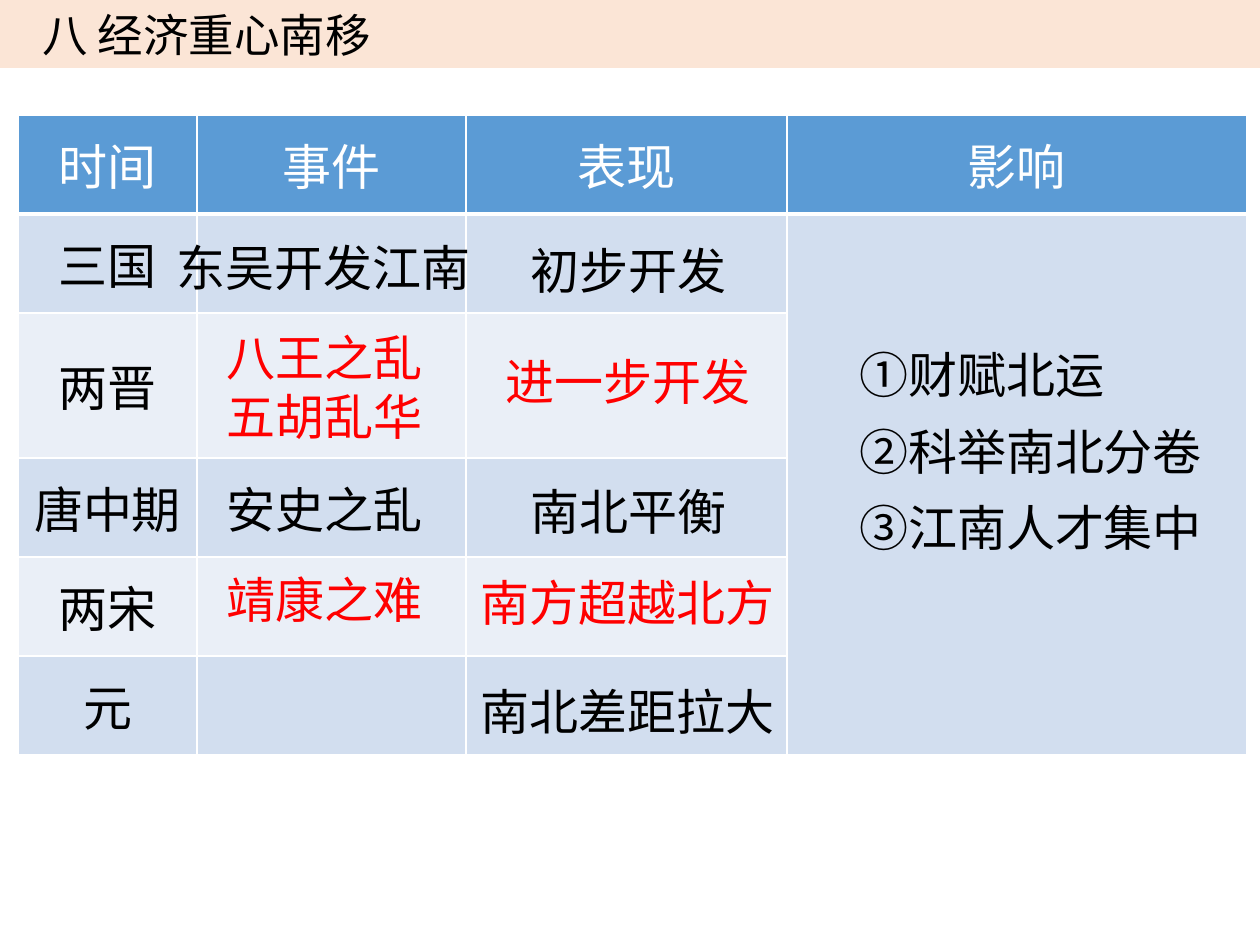
from lxml.etree import SubElement
from pptx import Presentation
from pptx.dml.color import RGBColor
from pptx.enum.text import MSO_ANCHOR as Anchor, MSO_AUTO_SIZE as AutoSize, PP_ALIGN as Align
from pptx.oxml.ns import qn
from pptx.util import Emu, Pt

FONT = "Noto Sans CJK SC"
BLACK, WHITE, RED = "000000", "FFFFFF", "FF0000"
HEADER_FILL, BAND_FILLS = "5B9BD5", ("D2DEEF", "EAEFF7")
COLUMN_WIDTHS = (179, 269, 321, 460)
ROW_HEIGHTS = (99, 99, 145, 99, 99, 99)
HEADINGS = ("时间", "事件", "表现", "影响")
PERIODS = ("三国", "两晋", "唐中期", "两宋", "元")
EVENT_CENTER, RESULT_CENTER = 308, 612
ENTRIES = (
    (EVENT_CENTER, 116, "东吴开发江南", BLACK),
    (EVENT_CENTER, 206, "八王之乱\n五胡乱华", RED),
    (EVENT_CENTER, 358, "安史之乱", BLACK),
    (EVENT_CENTER, 448, "靖康之难", RED),
    (RESULT_CENTER, 119, "初步开发", BLACK),
    (RESULT_CENTER, 230, "进一步开发", RED),
    (RESULT_CENTER, 360, "南北平衡", BLACK),
    (RESULT_CENTER, 451, "南方超越北方", RED),
    (RESULT_CENTER, 560, "南北差距拉大", BLACK),
)
EFFECTS = "①财赋北运\n②科举南北分卷\n③江南人才集中"


def px(length):
    return Emu(round(length * 914400 / 126))


def color(value):
    return RGBColor.from_string(value)


def format_text(text_frame, size, text_color, align=Align.LEFT, spacing=None):
    for paragraph in text_frame.paragraphs:
        paragraph.alignment = align
        if spacing:
            paragraph.line_spacing = spacing
        for run in paragraph.runs:
            run.font.size = Pt(size)
            run.font.bold = False
            run.font.color.rgb = color(text_color)
            run.font.name = FONT
            SubElement(run._r.get_or_add_rPr(), qn("a:ea"), typeface=FONT)


def add_title(slide, left, top, width, height):
    title = slide.shapes.title
    title.left, title.top, title.width, title.height = map(px, (left, top, width, height))
    title.fill.solid()
    title.fill.fore_color.rgb = color("FBE5D6")
    text_frame = title.text_frame
    text_frame.text = "八 经济重心南移"
    text_frame.auto_size = AutoSize.NONE
    text_frame.vertical_anchor = Anchor.MIDDLE
    text_frame.margin_left = px(42)
    text_frame.margin_top = text_frame.margin_bottom = 0
    format_text(text_frame, 26, BLACK)


def format_cell(cell, fill, bottom_width):
    properties = cell._tc.get_or_add_tcPr()
    for side, width in (("L", 1), ("R", 1), ("T", 1), ("B", bottom_width)):
        line = SubElement(properties, qn(f"a:ln{side}"), w=str(Pt(width)))
        SubElement(SubElement(line, qn("a:solidFill")), qn("a:srgbClr"), val=WHITE)
    cell.fill.solid()
    cell.fill.fore_color.rgb = color(fill)
    cell.vertical_anchor = Anchor.MIDDLE


def add_period_table(slide, left, top):
    size = len(ROW_HEIGHTS), len(COLUMN_WIDTHS)
    frame = slide.shapes.add_table(
        *size, px(left), px(top), px(sum(COLUMN_WIDTHS)), px(sum(ROW_HEIGHTS)))
    table = frame.table
    for column, width in zip(table.columns, COLUMN_WIDTHS):
        column.width = px(width)
    for index, (row, height) in enumerate(zip(table.rows, ROW_HEIGHTS)):
        row.height = px(height)
        header = index == 0
        fill = HEADER_FILL if header else BAND_FILLS[(index - 1) % 2]
        texts = HEADINGS if header else (PERIODS[index - 1],)
        for cell in row.cells:
            format_cell(cell, fill, 3 if header else 1)
        for cell, text in zip(row.cells, texts):
            cell.text_frame.text = text
            format_text(cell.text_frame, 28, WHITE if header else BLACK, Align.CENTER)
    table.cell(1, 3).merge(table.cell(5, 3))


def add_label(slide, left, top, width, height, text, text_color, spacing=None):
    label = slide.shapes.add_textbox(px(left), px(top), px(width), px(height))
    text_frame = label.text_frame
    text_frame.text = text
    text_frame.word_wrap = False
    text_frame.auto_size = AutoSize.SHAPE_TO_FIT_TEXT
    format_text(text_frame, 28, text_color, spacing=spacing)


def add_entries(slide, left, top):
    for center, offset, text, text_color in ENTRIES:
        lines = text.split("\n")
        width = 50 * len(lines[0]) + 23
        height = 59 * len(lines) + 13
        add_label(slide, left + center - width / 2, top + offset,
                  width, height, text, text_color)
    add_label(slide, left + 829, top + 206, 372, 233, EFFECTS, BLACK, 1.3)


def main():
    presentation = Presentation()
    presentation.slide_width, presentation.slide_height = px(1260), px(945)
    slide = presentation.slides.add_slide(presentation.slide_layouts[5])
    add_title(slide, 0, 0, 1260, 68)
    add_period_table(slide, 18, 115)
    add_entries(slide, 18, 115)
    presentation.save("out.pptx")


if __name__ == "__main__":
    main()
